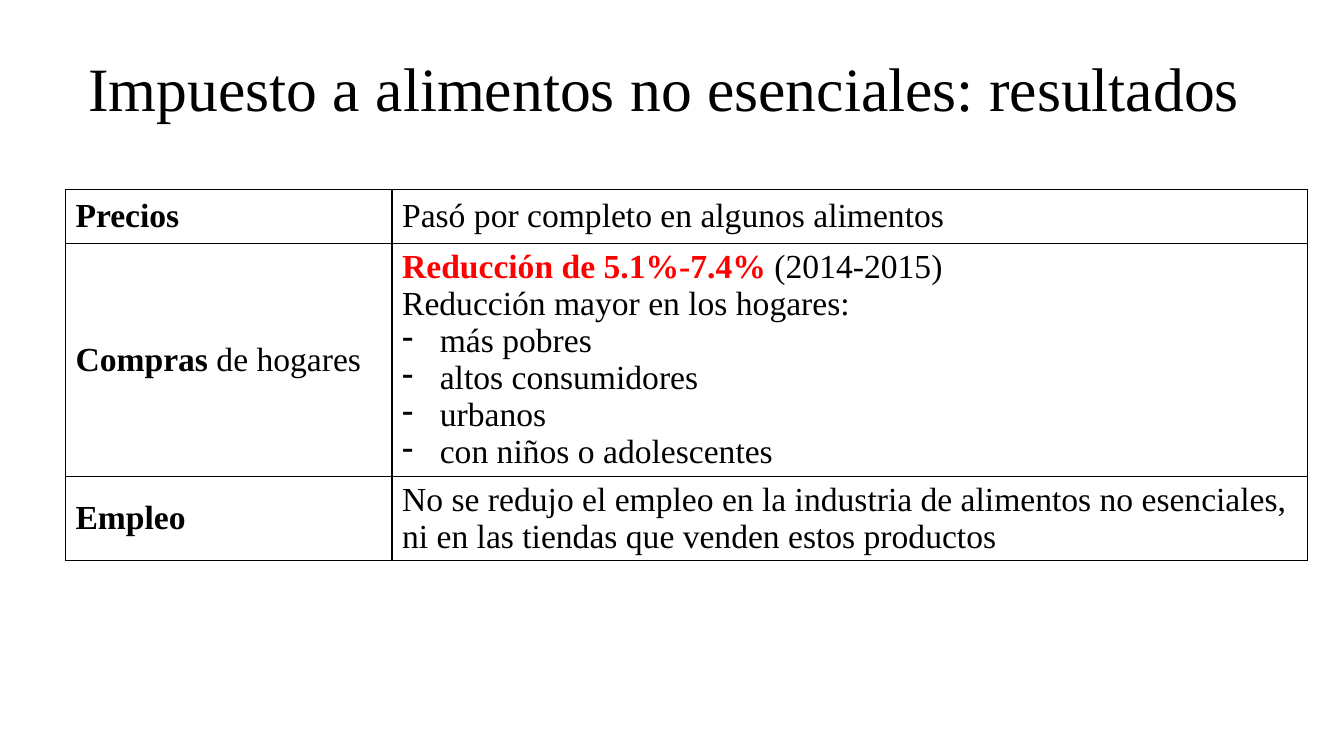
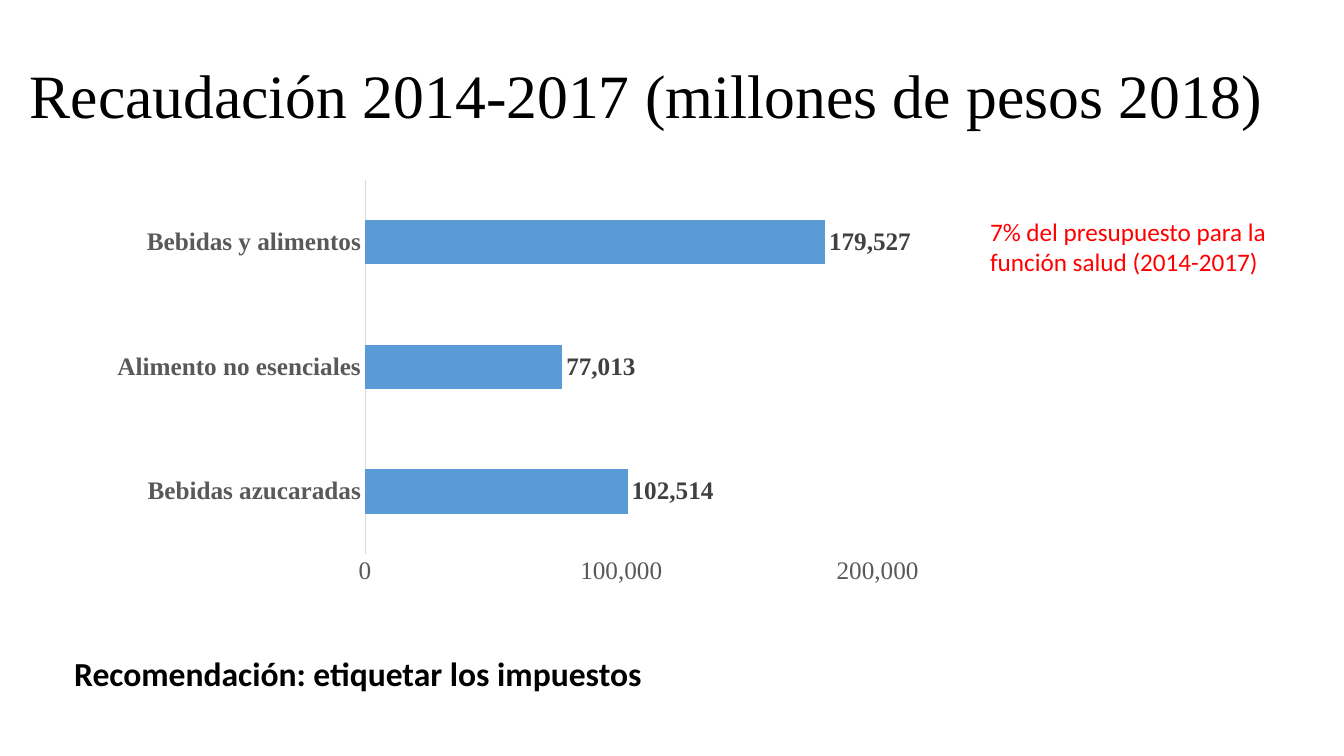
"""Build two slides on the results and revenue of the food and drink taxes."""

from dataclasses import dataclass
from typing import Any

from lxml import etree
from pptx import Presentation
from pptx.chart.data import CategoryChartData
from pptx.dml.color import RGBColor
from pptx.enum.chart import XL_CHART_TYPE, XL_LABEL_POSITION, XL_TICK_MARK
from pptx.enum.text import MSO_ANCHOR, MSO_AUTO_SIZE
from pptx.oxml.ns import qn
from pptx.util import Cm, Pt

MIDDLE = MSO_ANCHOR.MIDDLE
TOP = MSO_ANCHOR.TOP
FIT_SHAPE = MSO_AUTO_SIZE.SHAPE_TO_FIT_TEXT
FIXED_SIZE = MSO_AUTO_SIZE.NONE
CLUSTERED_BARS = XL_CHART_TYPE.BAR_CLUSTERED
OUTSIDE_END = XL_LABEL_POSITION.OUTSIDE_END
NO_TICK = XL_TICK_MARK.NONE


@dataclass(frozen=True)
class Theme:
    """Colours, fonts and type sizes of the deck."""

    ink: str = "000000"
    accent: str = "FF0000"
    bar: str = "5B9BD5"
    axis_text: str = "595959"
    axis_line: str = "D9D9D9"
    value_text: str = "404040"
    serif: str = "Times New Roman"
    sans: str = "Calibri"
    title_size: int = 44
    body_size: int = 24
    detail_size: int = 18
    chart_size: int = 10


THEME = Theme()


@dataclass(frozen=True)
class Box:
    """A rectangle in centimetres."""

    left: float
    top: float
    width: float
    height: float

    def lengths(self) -> tuple[Cm, Cm, Cm, Cm]:
        """Return the rectangle as slide lengths."""
        return Cm(self.left), Cm(self.top), Cm(self.width), Cm(self.height)


@dataclass(frozen=True)
class Run:
    """A stretch of evenly formatted text."""

    text: str
    bold: bool = False
    color: str = THEME.ink


@dataclass(frozen=True)
class Line:
    """A paragraph of runs, with a dash if it is a list item."""

    runs: tuple[Run, ...]
    dashed: bool = False


@dataclass(frozen=True)
class Finding:
    """A table row: its topic, its results and its height."""

    topic: Line
    results: tuple[Line, ...]
    height: float


@dataclass(frozen=True)
class Caption:
    """A free-standing text."""

    box: Box
    run: Run
    size: int
    font: str = THEME.sans
    wrap: bool = True
    anchor: Any = TOP
    autosize: Any = FIT_SHAPE
    spacing: float = 1.0


def title(text: str, box: Box) -> Caption:
    """Return a caption in the shared title style."""
    return Caption(box, Run(text), THEME.title_size, THEME.serif,
                   anchor=MIDDLE, autosize=FIXED_SIZE, spacing=0.9)


def plain(text: str, dashed: bool = False) -> Line:
    """Return a paragraph of one regular run."""
    return Line((Run(text),), dashed)


RESULTS_TITLE = title("Impuesto a alimentos no esenciales: resultados",
                      Box(1.98, 0.46, 30.96, 3.68))
REVENUE_TITLE = title("Recaudación 2014-2017 (millones de pesos 2018)",
                      Box(0.5, 0.64, 33.37, 3.68))
BUDGET_SHARE = Caption(
    Box(24.7, 5.32, 8.08, 1.8),
    Run("7% del presupuesto para la función salud (2014-2017)", color=THEME.accent),
    THEME.detail_size)
RECOMMENDATION = Caption(
    Box(1.62, 16.33, 15.16, 1.27),
    Run("Recomendación: etiquetar los impuestos", bold=True),
    THEME.body_size, wrap=False)

HOUSEHOLD_GROUPS = ("más pobres", "altos consumidores", "urbanos",
                    "con niños o adolescentes")
FINDINGS = (
    Finding(Line((Run("Precios", True),)),
            (plain("Pasó por completo en algunos alimentos"),), 1.35),
    Finding(Line((Run("Compras", True), Run(" de hogares"))),
            (Line((Run("Reducción de 5.1%-7.4% ", True, THEME.accent),
                   Run("(2014-2015)"))),
             plain("Reducción mayor en los hogares:"),
             *(plain(group, dashed=True) for group in HOUSEHOLD_GROUPS)), 5.87),
    Finding(Line((Run("Empleo", True),)),
            (plain("No se redujo el empleo en la industria de alimentos no "
                   "esenciales, ni en las tiendas que venden estos productos"),), 2.11),
)
FINDINGS_LEFT, FINDINGS_TOP = 1.65, 4.78
COLUMN_WIDTHS = (8.23, 23.06)
DASH_INDENT = 0.95

REVENUE_BOX = Box(2.54, 4.32, 21.03, 10.64)
REVENUE = {
    "Bebidas azucaradas": 102514,
    "Alimento no esenciales": 77013,
    "Bebidas y alimentos": 179527,
}
THOUSANDS = {"number_format": "#,##0", "number_format_is_linked": False}


def assign(target: Any, values: dict[str, Any]) -> None:
    """Set each named attribute on the target."""
    for name, value in values.items():
        setattr(target, name, value)


def style_font(font: Any, name: str, size: int, color: str, bold: bool = False) -> None:
    """Set the typeface, size, colour and weight of a font."""
    assign(font, {"name": name, "size": Pt(size), "bold": bold})
    font.color.rgb = RGBColor.from_string(color)


def add_dash(paragraph: Any) -> None:
    """Give a paragraph a hanging dash."""
    properties = paragraph._p.get_or_add_pPr()
    properties.set("marL", str(Cm(DASH_INDENT)))
    properties.set("indent", str(-Cm(DASH_INDENT)))
    etree.SubElement(properties, qn("a:buChar"), char="-")


def write_lines(frame: Any, lines: tuple[Line, ...], font: str, size: int,
                spacing: float | None = None) -> None:
    """Fill a text frame with formatted paragraphs."""
    for index, line in enumerate(lines):
        paragraph = frame.add_paragraph() if index else frame.paragraphs[0]
        if spacing:
            paragraph.line_spacing = spacing
        if line.dashed:
            add_dash(paragraph)
        for run in line.runs:
            piece = paragraph.add_run()
            piece.text = run.text
            style_font(piece.font, font, size, run.color, run.bold)


def add_caption(slide: Any, caption: Caption) -> None:
    """Draw a free-standing text."""
    frame = slide.shapes.add_textbox(*caption.box.lengths()).text_frame
    assign(frame, {"word_wrap": caption.wrap, "auto_size": caption.autosize,
                   "vertical_anchor": caption.anchor})
    write_lines(frame, (Line((caption.run,)),), caption.font, caption.size,
                caption.spacing)


def add_borders(cell: Any) -> None:
    """Draw a thin line on each side of a cell."""
    properties = cell._tc.get_or_add_tcPr()
    for side in ("lnL", "lnR", "lnT", "lnB"):
        border = etree.SubElement(properties, qn(f"a:{side}"), w=str(Pt(1)))
        fill = etree.SubElement(border, qn("a:solidFill"))
        etree.SubElement(fill, qn("a:srgbClr"), val=THEME.ink)


def add_findings(slide: Any) -> None:
    """Draw the table of results."""
    box = Box(FINDINGS_LEFT, FINDINGS_TOP, sum(COLUMN_WIDTHS),
              sum(finding.height for finding in FINDINGS))
    table = slide.shapes.add_table(len(FINDINGS), len(COLUMN_WIDTHS),
                                   *box.lengths()).table
    assign(table, {"first_row": False, "horz_banding": False})
    for column, width in zip(table.columns, COLUMN_WIDTHS):
        column.width = Cm(width)
    for row, finding in zip(table.rows, FINDINGS):
        row.height = Cm(finding.height)
        for cell, lines in zip(row.cells, ((finding.topic,), finding.results)):
            add_borders(cell)
            cell.fill.background()
            cell.vertical_anchor = MIDDLE
            write_lines(cell.text_frame, lines, THEME.serif, THEME.body_size)


def add_revenue(slide: Any) -> None:
    """Draw the bar chart of revenue."""
    data = CategoryChartData(number_format="#,##0")
    data.categories = list(REVENUE)
    data.add_series("Series 1", list(REVENUE.values()))
    chart = slide.shapes.add_chart(CLUSTERED_BARS, *REVENUE_BOX.lengths(), data).chart
    assign(chart, {"has_legend": False, "has_title": False})
    style_font(chart.font, THEME.sans, THEME.chart_size, THEME.ink)

    bars = chart.plots[0]
    assign(bars, {"gap_width": 182, "vary_by_categories": False})
    fill = bars.series[0].format.fill
    fill.solid()
    fill.fore_color.rgb = RGBColor.from_string(THEME.bar)

    amounts = bars.series[0].data_labels
    assign(amounts, {"show_value": True, "position": OUTSIDE_END, **THOUSANDS})
    style_font(amounts.font, THEME.serif, THEME.detail_size, THEME.value_text, True)

    taxes, pesos = chart.category_axis, chart.value_axis
    for axis, bold in ((taxes, True), (pesos, False)):
        assign(axis, {"has_major_gridlines": False, "major_tick_mark": NO_TICK,
                      "minor_tick_mark": NO_TICK})
        style_font(axis.tick_labels.font, THEME.serif, THEME.detail_size,
                   THEME.axis_text, bold)
    taxes.format.line.width = Pt(0.75)
    taxes.format.line.color.rgb = RGBColor.from_string(THEME.axis_line)
    pesos.format.line.fill.background()
    assign(pesos, {"minimum_scale": 0, "maximum_scale": 200000, "major_unit": 100000})
    assign(pesos.tick_labels, THOUSANDS)


def main() -> None:
    """Build and save the deck."""
    deck = Presentation()
    assign(deck, {"slide_width": Cm(33.87), "slide_height": Cm(19.05)})
    blank = deck.slide_layouts[6]

    results = deck.slides.add_slide(blank)
    add_caption(results, RESULTS_TITLE)
    add_findings(results)

    revenue = deck.slides.add_slide(blank)
    add_caption(revenue, REVENUE_TITLE)
    add_revenue(revenue)
    for caption in (BUDGET_SHARE, RECOMMENDATION):
        add_caption(revenue, caption)

    deck.save("out.pptx")


if __name__ == "__main__":
    main()
